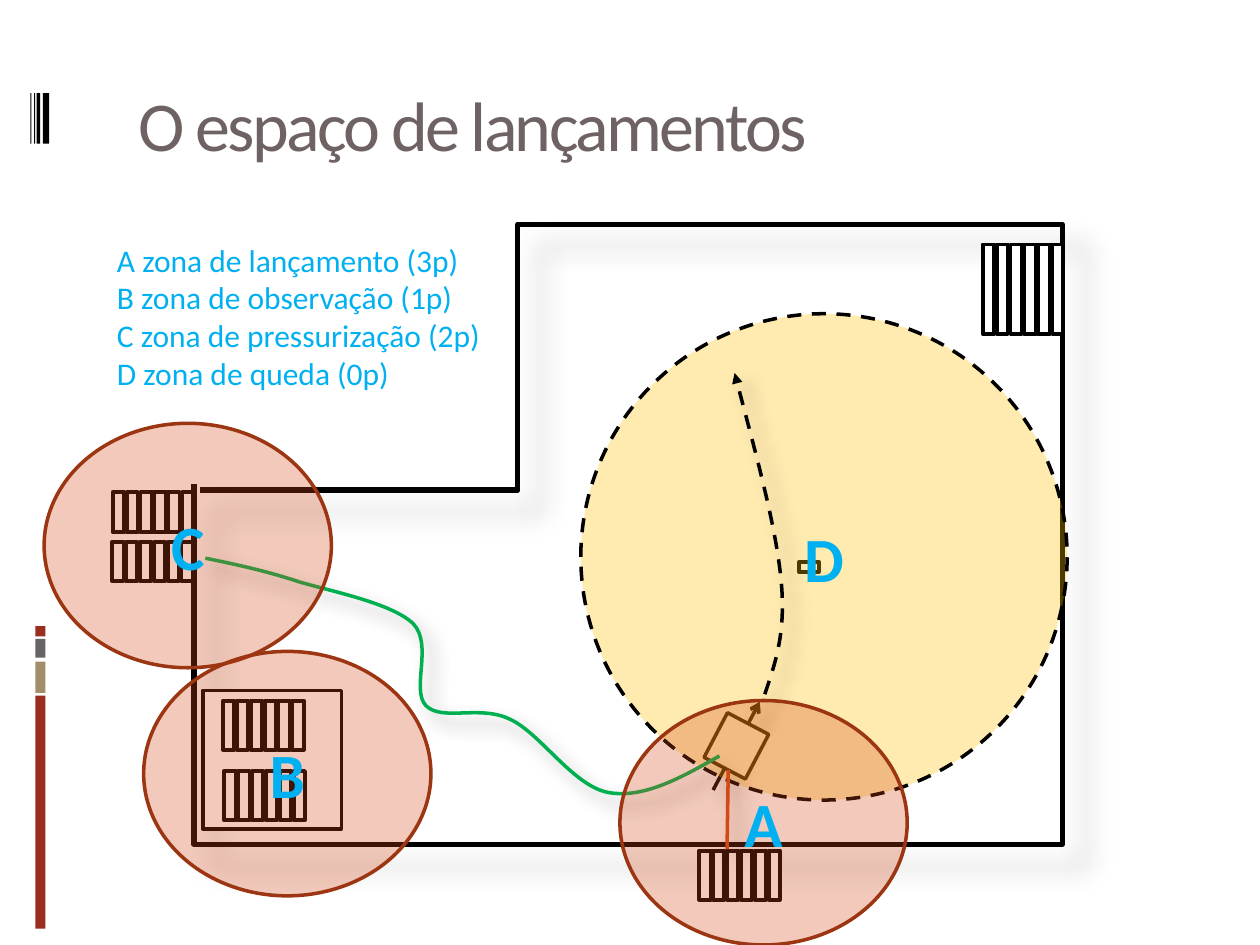
from lxml.etree import SubElement
from pptx import Presentation
from pptx.dml.color import RGBColor
from pptx.enum.dml import MSO_LINE
from pptx.enum.shapes import MSO_CONNECTOR, MSO_SHAPE
from pptx.enum.text import MSO_ANCHOR, MSO_AUTO_SIZE, PP_ALIGN
from pptx.oxml.ns import qn
from pptx.util import Inches, Pt

RECT, OVAL = MSO_SHAPE.RECTANGLE, MSO_SHAPE.OVAL
STRAIGHT, DASH = MSO_CONNECTOR.STRAIGHT, MSO_LINE.DASH
LEFT, CENTER = PP_ALIGN.LEFT, PP_ALIGN.CENTER
TOP, MIDDLE = MSO_ANCHOR.TOP, MSO_ANCHOR.MIDDLE
FIT = MSO_AUTO_SIZE.SHAPE_TO_FIT_TEXT

COLS = 100  # square grid cells across the slide
FONT = "Calibri"
HEX = {
    "black": "000000", "white": "FFFFFF", "title": "6E6263", "blue": "00B0F0",
    "red": "9B2D1F", "tan": "A28E6A", "gray": "696464", "gold": "FFC000",
    "orange": "D34817", "rust": "9C3511", "green": "00B050",
}
# opacity in percent, blur and distance in points
DEEP, SOFT = (26, 15, 18), (35, 10.2, 8)


class Board:
    """Style and current slide; lengths are in grid cells."""

    def __init__(self, deck):
        self.cell = deck.slide_width / COLS
        self.slide = deck.slides.add_slide(deck.slide_layouts[5])
        self.shapes = self.slide.shapes

    def emu(self, *vals):
        return [round(v * self.cell) for v in vals]

    def color(self, name):
        return RGBColor.from_string(HEX[name])

    def line(self, item, name, width, dash=None, tip=None):
        item.line.color.rgb = self.color(name)
        item.line.width = Pt(width)
        if dash:
            item.line.dash_style = dash
        if tip:
            SubElement(item.line._get_or_add_ln(), qn("a:tailEnd"), type=tip)

    def shade(self, item, look=None):
        """Set the shadow, or clear it; call after fill and line."""
        effects = SubElement(item._element.spPr, qn("a:effectLst"))
        if look:
            alpha, blur, dist = look
            cast = SubElement(effects, qn("a:outerShdw"), blurRad=str(Pt(blur)),
                              dist=str(Pt(dist)), dir="2700000",
                              algn="tl", rotWithShape="0")
            tint = SubElement(cast, qn("a:srgbClr"), val=HEX["black"])
            SubElement(tint, qn("a:alpha"), val=str(alpha * 1000))

    def text(self, para, words, size, name, bold=False):
        run = para.add_run()
        run.text = words
        run.font.name, run.font.size, run.font.bold = FONT, Pt(size), bold
        run.font.color.rgb = self.color(name)
        return run

    def title(self, words, *box):
        item = self.shapes.title
        item.left, item.top, item.width, item.height = self.emu(*box)
        frame = item.text_frame
        frame.vertical_anchor, frame.margin_top = TOP, Inches(0.09)
        frame.paragraphs[0].alignment = LEFT
        run = self.text(frame.paragraphs[0], words, 40, "title")
        run.font._element.set("spc", "-150")

    def shape(self, kind, box, fill, edge=None, width=2, dash=None,
              alpha=None, turn=0, home=None):
        item = (home or self.shapes).add_shape(kind, *self.emu(*box))
        item.rotation = turn
        item.fill.solid()
        item.fill.fore_color.rgb = self.color(fill)
        if alpha:
            tint = item._element.spPr.find(qn("a:solidFill"))[0]
            SubElement(tint, qn("a:alpha"), val=str(alpha * 1000))
        if edge:
            self.line(item, edge, width, dash)
        else:
            item.line.fill.background()
        self.shade(item)
        return item

    def zone(self, mark, box, fill, edge, alpha, dash=None):
        item = self.shape(OVAL, box, fill, edge, 2, dash, alpha)
        frame = item.text_frame
        frame.vertical_anchor = MIDDLE
        frame.paragraphs[0].alignment = CENTER
        self.text(frame.paragraphs[0], mark, 36, "blue", True)

    def steps(self, x, y, tall, count=6, wide=0.9, pitch=1.1):
        """Row of upright bars; x, y is the centre of the first."""
        home = self.shapes.add_group_shape().shapes
        for i in range(count):
            box = (x + i * pitch - tall / 2, y - wide / 2, tall, wide)
            self.shape(RECT, box, "white", "black", 2.25, turn=270, home=home)

    def trace(self, points, name, width, look, dash=None, tip=None, curve=False):
        """Open outline; a curve takes its points as Bezier triples."""
        spots = [self.emu(*p) for p in points]
        pen = self.shapes.build_freeform(*spots[0], scale=1.0)
        pen.add_line_segments(spots[1:], close=False)
        item = pen.convert_to_shape()
        if curve:
            track = item._element.spPr.find(".//" + qn("a:path"))
            legs = track.findall(qn("a:lnTo"))
            for i in range(0, len(legs), 3):
                bend = SubElement(track, qn("a:cubicBezTo"))
                for leg in legs[i:i + 3]:
                    bend.append(leg[0])
                    track.remove(leg)
        item.fill.background()
        self.line(item, name, width, dash, tip)
        self.shade(item, look)

    def ramp(self):
        home = self.shapes.add_group_shape().shapes
        self.shape(RECT, (56.6, 57.2, 3.7, 4), "white", "black",
                   turn=27.7, home=home)
        item = home.add_connector(STRAIGHT, *self.emu(56.6, 62.7, 60.3, 55.7))
        self.line(item, "black", 2, tip="arrow")
        self.shade(item, SOFT)

    def legend(self, rows, *box):
        frame = self.shapes.add_textbox(*self.emu(*box)).text_frame
        frame.word_wrap, frame.auto_size = True, FIT
        for i, row in enumerate(rows):
            para = frame.add_paragraph() if i else frame.paragraphs[0]
            self.text(para, row, 18, "blue")


def main():
    deck = Presentation()
    deck.slide_width, deck.slide_height = Inches(10), Inches(7.5)
    board = Board(deck)

    for y, tall, name in ((55.2, 18.5, "red"), (52.5, 2.5, "tan"),
                          (50.7, 1.5, "gray"), (49.7, 0.8, "red")):
        board.shape(RECT, (2.8, y, 0.8, tall), name)
    for x, wide in ((3.4, 0.5), (2.9, 0.3), (2.7, 0.1), (2.4, 0.1)):
        board.shape(RECT, (x, 7.4, wide, 4), "black")
    board.title("O espaço de lançamentos", 10, 5.6, 85, 10)

    walls = [(15.4, 38.4), (15.4, 67), (84.3, 67), (84.3, 17.8),
             (41.1, 17.8), (41.1, 38.9), (15.9, 38.9)]
    board.trace(walls, "black", 3, DEEP)
    board.steps(9.4, 40.65, 3.2)
    board.shape(RECT, (16.1, 54.8, 11, 11), "white", "black")
    for spot in ((18.15, 57.55, 3.9), (18.25, 63.15, 3.9),
                 (9.35, 44.55, 3.1), (78.45, 22.95, 7.1)):
        board.steps(*spot)
    board.shape(RECT, (63.4, 44.6, 1.6, 0.8), "white", "black")
    board.steps(55.95, 69.45, 3.9)
    board.ramp()

    board.zone("D", (46.1, 24.9, 38.6, 38.6), "gold", "black", 31, DASH)
    hose = [(57.1, 60),
            (54.1, 61.7), (51.1, 63.4), (48.3, 62.9),
            (45.5, 62.4), (42.9, 58.2), (40.5, 57.1),
            (38.1, 55.9), (35.1, 57.3), (33.8, 56),
            (32.6, 54.7), (34.4, 51.2), (32.8, 49.5),
            (31.1, 47.9), (26.6, 47), (23.8, 46.2),
            (21.1, 45.3), (18.7, 44.8), (16.3, 44.3)]
    board.trace(hose, "green", 2, SOFT, curve=True)
    board.trace([(57.8, 61.1), (57.7, 67.4)], "orange", 2, SOFT)
    flight = [(60.7, 55.1), (61.5, 52.7), (62.4, 50.3), (62, 46.1),
              (61.6, 41.8), (59.9, 35.7), (58.3, 29.6)]
    board.trace(flight, "black", 2, SOFT, DASH, "triangle", curve=True)

    for mark, x, y in (("A", 49.2, 55.6), ("C", 3.5, 33.6), ("B", 11.4, 51.7)):
        board.zone(mark, (x, y, 22.8, 19.4), "orange", "rust", 29)
    board.legend(("A zona de lançamento (3p)", "B zona de observação (1p)",
                  "C zona de pressurização (2p)", "D zona de queda (0p)"),
                 8.3, 18.6, 31.5, 13.1)
    deck.save("out.pptx")


if __name__ == "__main__":
    main()
